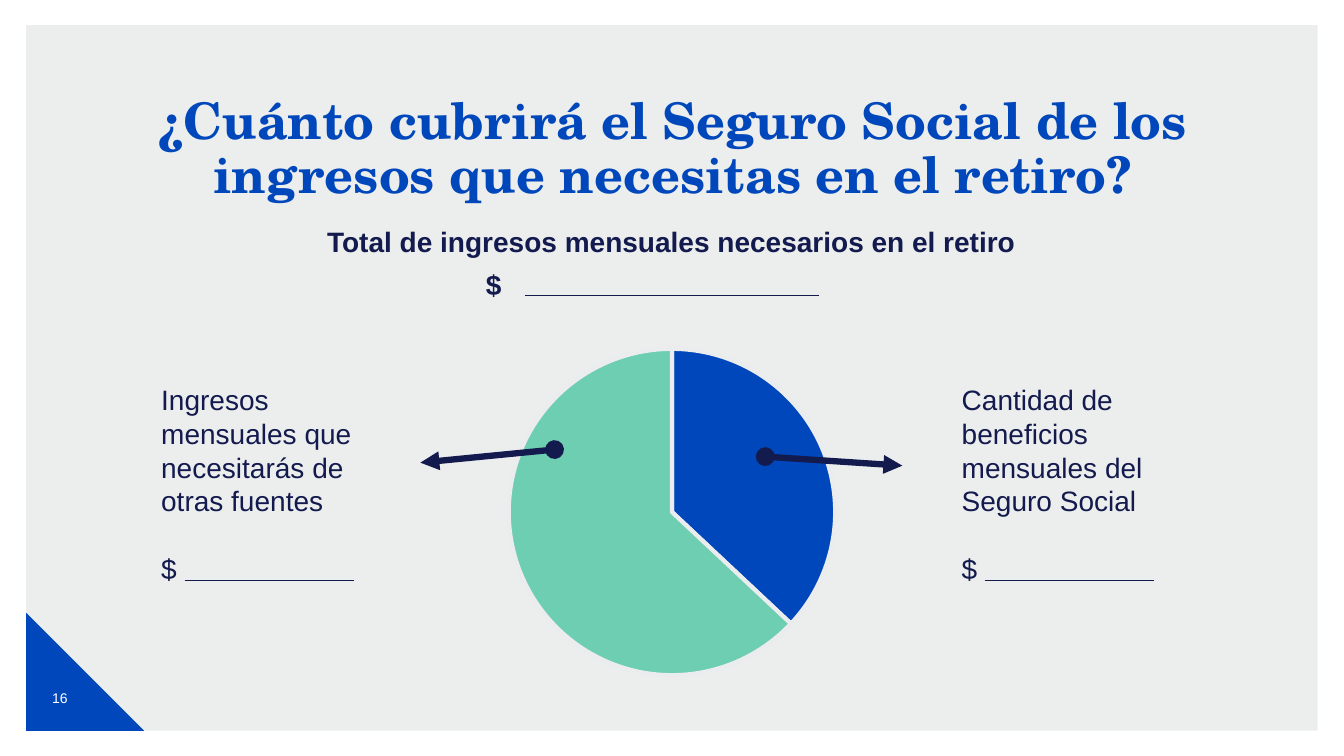
"""Build the slide on how much retirement income Social Security will cover."""
from lxml import etree
from pptx import Presentation
from pptx.chart.data import CategoryChartData
from pptx.dml.color import RGBColor
from pptx.enum.chart import XL_CHART_TYPE as CT
from pptx.enum.shapes import MSO_CONNECTOR as MC, MSO_SHAPE as MS
from pptx.enum.text import MSO_ANCHOR as MA, MSO_AUTO_SIZE as AS, PP_ALIGN as PA
from pptx.oxml.ns import qn
from pptx.util import Inches, Pt

C = {"navy": "131A4D", "blue": "0047BB", "green": "6ECEB1",
     "gray": "D0D3D4", "edge": "EBECEE", "white": "FFFFFF"}
rgb = {name: RGBColor.from_string(value) for name, value in C.items()}


def write(sp, box, lines, size, color="navy", bold=False, font="Arial",
          align=PA.LEFT, anchor=MA.TOP, inset=0.1, spacing=None, gap=0):
    """Place a text shape and fill it with formatted paragraphs."""
    sp.left, sp.top, sp.width, sp.height = [Inches(v) for v in box]
    tf = sp.text_frame
    tf.text = "\n".join(lines)
    tf.word_wrap, tf.auto_size, tf.vertical_anchor = True, AS.NONE, anchor
    tf.margin_left = tf.margin_right = Inches(inset)
    for p in tf.paragraphs:
        p.alignment, p.line_spacing, p.space_before = align, spacing, Pt(gap)
        for r in p.runs:
            r.font.name, r.font.size, r.font.bold = font, Pt(size), bold
            r.font.color.rgb = rgb[color]
    return tf


def line(x1, y1, x2, y2, width=1, arrow=False):
    """Draw a navy rule, or an arrow that starts in a dot."""
    cn = s.shapes.add_connector(MC.STRAIGHT, *[Inches(v) for v in (x1, y1, x2, y2)])
    cn.line.color.rgb, cn.line.width = rgb["navy"], Pt(width)
    if arrow:
        ln = cn.line._get_or_add_ln()
        etree.SubElement(ln, qn("a:headEnd"), type="oval")
        etree.SubElement(ln, qn("a:tailEnd"), type="triangle")
    etree.SubElement(cn._element.spPr, qn("a:effectLst"))


prs = Presentation()
prs.slide_width, prs.slide_height = Inches(13.33), Inches(7.5)
s = prs.slides.add_slide(prs.slide_layouts[1])
title, body = s.placeholders

panels = [(MS.RECTANGLE, (0.26, 0.25, 12.81, 7), "gray"),
          (MS.RIGHT_TRIANGLE, (0.26, 6.08, 1.17, 1.17), "blue")]
for i, (kind, box, color) in enumerate(panels):
    sp = s.shapes.add_shape(kind, *[Inches(v) for v in box])
    sp.shadow.inherit = False
    sp.fill.solid()
    sp.fill.fore_color.rgb = rgb[color]
    sp.line.fill.background()
    s.shapes._spTree.insert(2 + i, sp._element)
    if color == "gray":
        clr = sp._element.spPr.find(".//" + qn("a:srgbClr"))
        etree.SubElement(clr, qn("a:alpha"), val="40000")

write(s.shapes.add_textbox(0, 0, 0, 0), (0.32, 6.63, 0.55, 0.58), ["16"], 10,
      "white", align=PA.CENTER, anchor=MA.MIDDLE)
write(title, (0.92, 0.9, 11.5, 1.53),
      ["¿Cuánto cubrirá el Seguro Social de los ingresos que necesitas en el retiro?"],
      36, "blue", True, "TeX Gyre Schola", PA.CENTER, inset=0, spacing=0.9)
tf = write(body, (1.63, 2.21, 10.06, 0.57),
           ["Total de ingresos mensuales necesarios en el retiro"],
           20, bold=True, align=PA.CENTER, inset=0, spacing=0.9, gap=10)
pPr = tf.paragraphs[0]._p.get_or_add_pPr()
pPr.set("marL", "0")
pPr.set("indent", "0")
etree.SubElement(pPr, qn("a:buNone"))
write(s.shapes.add_textbox(0, 0, 0, 0), (4.82, 2.64, 0.78, 0.57), ["$"],
      20, bold=True, inset=0, spacing=0.9, gap=10)
line(5.21, 2.93, 8.12, 2.93)

data = CategoryChartData()
data.categories = ["1", "2"]
data.add_series("Series 1", (37, 63))
chart = s.shapes.add_chart(CT.PIE, Inches(4.05), Inches(3.32),
                           Inches(5.23), Inches(3.52), data).chart
chart.has_legend = chart.has_title = False
chart.font.name, chart.font.size = "Arial", Pt(10)
chart.font.color.rgb = rgb["navy"]
chart.plots[0].vary_by_categories = False
for i, color in enumerate(["blue", "green"]):
    fmt = chart.plots[0].series[0].points[i].format
    fmt.fill.solid()
    fmt.fill.fore_color.rgb = rgb[color]
    fmt.line.color.rgb, fmt.line.width = rgb["edge"], Pt(3)

area = chart._chartSpace.chart.plotArea
for old in area.findall(qn("c:layout")):
    area.remove(old)
layout = etree.Element(qn("c:layout"))
area.insert(0, layout)
manual = etree.SubElement(layout, qn("c:manualLayout"))
for tag, val in [("layoutTarget", "inner"), ("xMode", "edge"), ("yMode", "edge"),
                 ("x", "0.19"), ("y", "0.04"), ("w", "0.62"), ("h", "0.92")]:
    etree.SubElement(manual, qn("c:" + tag), val=val)

sides = [((9.44, 3.75, 2.17, 1.78), "Cantidad de beneficios mensuales del Seguro Social",
          (7.59, 4.53, 8.95, 4.62), 9.77),
         ((1.5, 3.75, 2.58, 2.42), "Ingresos mensuales que necesitarás de otras fuentes",
          (5.5, 4.46, 4.17, 4.59), 1.83)]
for box, label, arrow, x in sides:
    tf = write(s.shapes.add_textbox(0, 0, 0, 0), box, [label, "$"], 20)
    tf.paragraphs[1].space_before = Pt(24)
    line(*arrow, width=4.5, arrow=True)
    line(x, 5.76, x + 1.68, 5.76)

prs.save("out.pptx")
